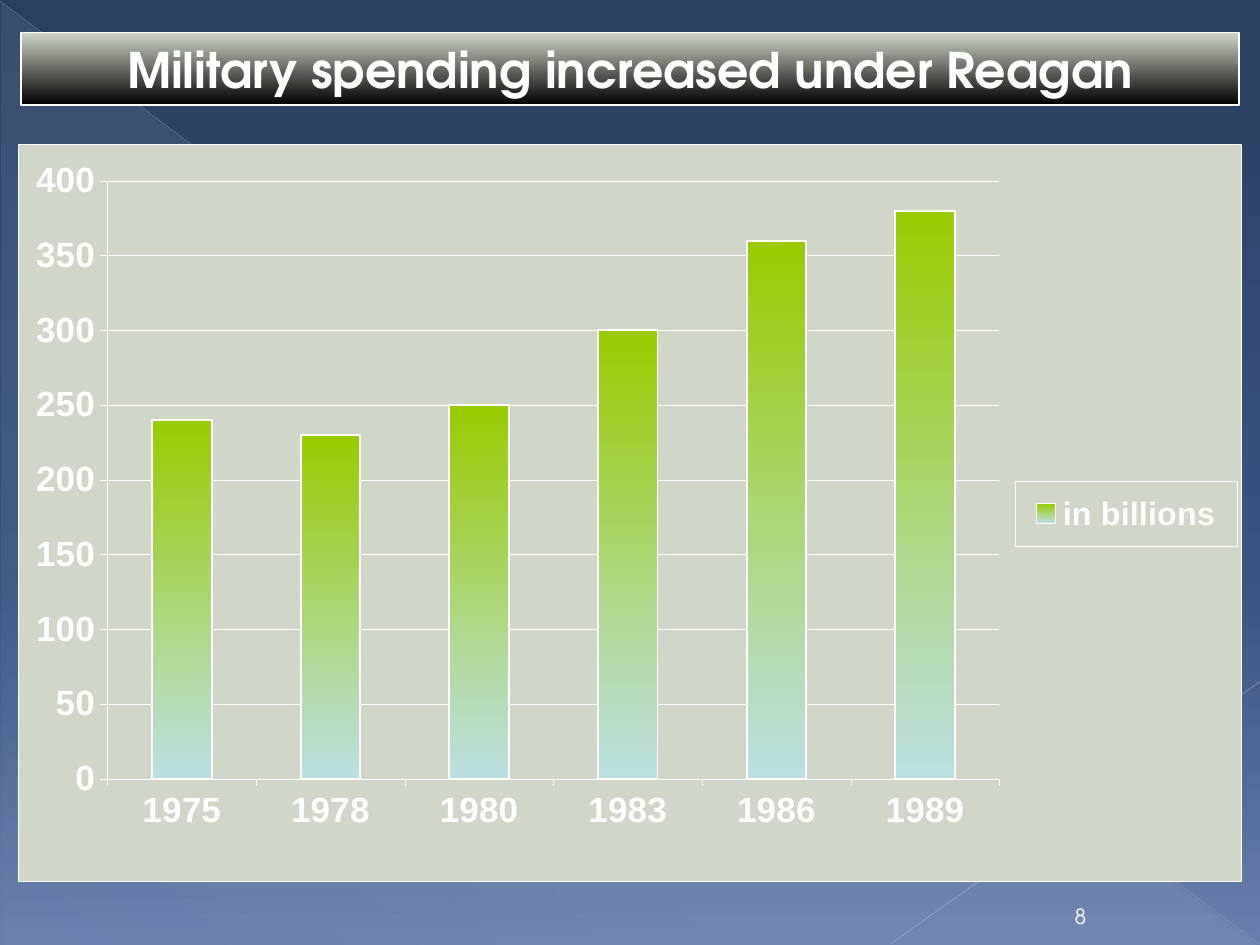
from lxml.etree import SubElement as Sub
from pptx import Presentation
from pptx.chart.data import CategoryChartData as Data
from pptx.dml.color import RGBColor as RGB
from pptx.enum.chart import XL_CHART_TYPE as KIND, XL_LEGEND_POSITION as SIDE
from pptx.enum.chart import XL_TICK_LABEL_POSITION as LABEL, XL_TICK_MARK as TICK
from pptx.enum.shapes import MSO_CONNECTOR as LINK, MSO_SHAPE as SHAPE
from pptx.enum.text import MSO_ANCHOR as ANCHOR, PP_ALIGN as ALIGN
from pptx.oxml import parse_xml
from pptx.oxml.ns import nsdecls, qn
from pptx.util import Pt

WHITE = RGB(255, 255, 255)
BLACK = RGB(0, 0, 0)
SAGE = RGB(0xD0, 0xD6, 0xC8)
LIME = RGB(0x99, 0xCC, 0)
AQUA = RGB(0xBB, 0xE0, 0xE3)
ICE = RGB(0xD6, 0xEC, 0xFF)
NAVY = RGB(0x29, 0x3F, 0x60)
BLUE = RGB(0x37, 0x53, 0x80)
STEEL = RGB(0x66, 0x7F, 0xAC)
MIST = RGB(0xB7, 0xBC, 0xC5)
HAZE = RGB(0xBF, 0xC3, 0xCB)
FACE = "TeX Gyre Adventor"


def grade(fill, root, stops, angle=90):
    """Give a fill inside root a gradient of (percent, colour, opacity) stops."""
    fill.gradient()
    fill.gradient_angle = 360 - angle
    group = root.find(".//" + qn("a:gsLst"))
    for old in list(group):
        group.remove(old)
    for pos, color, alpha in stops:
        stop = Sub(group, qn("a:gs"), pos=str(pos * 1000))
        tint = Sub(stop, qn("a:srgbClr"), val=str(color))
        if alpha < 100:
            Sub(tint, qn("a:alpha"), val=str(alpha * 1000))


def style(font, size, face=FACE, bold=False):
    """Set white type of a given size and face."""
    font.size, font.name, font.bold = Pt(size), face, bold
    font.color.rgb = WHITE


def stroke(line, width):
    """Draw a white line of a given width."""
    line.color.rgb = WHITE
    line.width = Pt(width)


def ray(slide, start, end, color, width, alpha):
    """Draw a faint line between two points."""
    ends = [Pt(n) for n in (*start, *end)]
    link = slide.shapes.add_connector(LINK.STRAIGHT, *ends)
    link.line.color.rgb = color
    link.line.width = Pt(width)
    props = link._element.spPr
    Sub(props.find(".//" + qn("a:srgbClr")), qn("a:alpha"), val=str(alpha * 1000))
    Sub(props, qn("a:effectLst"))


def scene(slide, x, y, w, h):
    """Paint the background, the pale triangle and the two rays."""
    grade(slide.background.fill, slide.element,
          [(0, NAVY, 100), (60, BLUE, 100), (100, STEEL, 100)])
    wedge = slide.shapes.add_shape(
        SHAPE.RIGHT_TRIANGLE, Pt(x + 0.7), Pt(y + 1.4), Pt(w - 1.4), Pt(h - 1.4))
    wedge.shadow.inherit = False
    wedge.line.fill.background()
    grade(wedge.fill, wedge._element,
          [(0, ICE, 10), (70, ICE, 8), (100, ICE, 1)], 133)
    ray(slide, (x, y + 0.7), (x + w - 0.7, y + h - 0.7), MIST, 0.39, 35)
    ray(slide, (x + w, y + 389.5), (x + 509, y + h - 0.7), HAZE, 0.47, 45)


def write(frame, text, size, anchor, bold=False):
    """Put one centred paragraph into a text frame."""
    frame.word_wrap = True
    frame.vertical_anchor = anchor
    para = frame.paragraphs[0]
    para.text = text
    para.alignment = ALIGN.CENTER
    style(para.font, size, bold=bold)


def banner(slide, x, y, w, h):
    """Place the title bar."""
    bar = slide.shapes.add_shape(SHAPE.RECTANGLE, Pt(x), Pt(y), Pt(w), Pt(h))
    bar.shadow.inherit = False
    grade(bar.fill, bar._element, [(0, SAGE, 100), (100, BLACK, 100)])
    stroke(bar.line, 0.75)
    write(bar.text_frame, "Military spending increased under Reagan", 28,
          ANCHOR.MIDDLE, True)


def folio(slide, x, y, w, h):
    """Place the slide number."""
    box = slide.shapes.add_textbox(Pt(x), Pt(y), Pt(w), Pt(h))
    write(box.text_frame, "8", 12, ANCHOR.BOTTOM)


def layout(x, y, w, h, inner=False):
    """Return a manual chart layout in fractions of the chart."""
    target = '<c:layoutTarget val="inner"/>' if inner else ""
    modes = '<c:xMode val="edge"/><c:yMode val="edge"/>'
    sizes = "".join(f'<c:{k} val="{v}"/>' for k, v in zip("xywh", (x, y, w, h)))
    return parse_xml(f'<c:layout {nsdecls("c")}><c:manualLayout>{target}{modes}'
                     f'{sizes}</c:manualLayout></c:layout>')


def frame(root, fill, width):
    """Fill and outline a chart part, ahead of its text settings."""
    paint = f'<a:solidFill><a:srgbClr val="{fill}"/></a:solidFill>'
    edge = f'<a:solidFill><a:srgbClr val="{WHITE}"/></a:solidFill>'
    root.find(qn("c:txPr")).addprevious(parse_xml(
        f'<c:spPr {nsdecls("c", "a")}>{paint}'
        f'<a:ln w="{Pt(width)}">{edge}</a:ln></c:spPr>'))


def graph(slide, x, y, w, h):
    """Place the column chart of spending by year."""
    data = Data()
    data.categories = ["1975", "1978", "1980", "1983", "1986", "1989"]
    data.add_series("in billions", [240, 230, 250, 300, 360, 380])
    chart = slide.shapes.add_chart(
        KIND.COLUMN_CLUSTERED, Pt(x), Pt(y), Pt(w), Pt(h), data).chart
    chart.has_title = False
    style(chart.font, 20, "Arial", True)
    frame(chart._chartSpace, SAGE, 0.75)

    for axis in (chart.category_axis, chart.value_axis):
        style(axis.tick_labels.font, 20, "Arial", True)
        stroke(axis.format.line, 0.28)
        axis.major_tick_mark = TICK.OUTSIDE
    chart.category_axis.tick_label_position = LABEL.LOW
    scale = chart.value_axis
    scale.minimum_scale, scale.maximum_scale, scale.major_unit = 0, 400, 50
    stroke(scale.major_gridlines.format.line, 0.28)

    plot = chart.plots[0]
    plot.gap_width = 150
    plot.vary_by_categories = False
    bars = plot.series[0]
    grade(bars.format.fill, bars._element, [(0, LIME, 100), (100, AQUA, 100)])
    stroke(bars.format.line, 1.11)
    area = chart._chartSpace.chart.plotArea
    for old in area.findall(qn("c:layout")):
        area.remove(old)
    area.insert(0, layout(0.073, 0.05, 0.729, 0.811, True))

    chart.has_legend = True
    key = chart.legend
    key.position = SIDE.RIGHT
    key.include_in_layout = False
    style(key.font, 18.4, "Arial", True)
    root = key._element
    for old in root.findall(qn("c:layout")):
        root.remove(old)
    root.find(qn("c:overlay")).addprevious(layout(0.815, 0.457, 0.181, 0.088))
    frame(root, SAGE, 0.28)


def main():
    """Build and save the slide."""
    deck = Presentation()
    deck.slide_width, deck.slide_height = Pt(720), Pt(540)
    slide = deck.slides.add_slide(deck.slide_layouts[6])
    scene(slide, 0, 0, 720, 540)
    folio(slide, 597.6, 510.5, 39.6, 23.8)
    graph(slide, 10, 82, 700, 422)
    banner(slide, 12, 18.5, 696, 41.5)
    deck.save("out.pptx")


if __name__ == "__main__":
    main()
